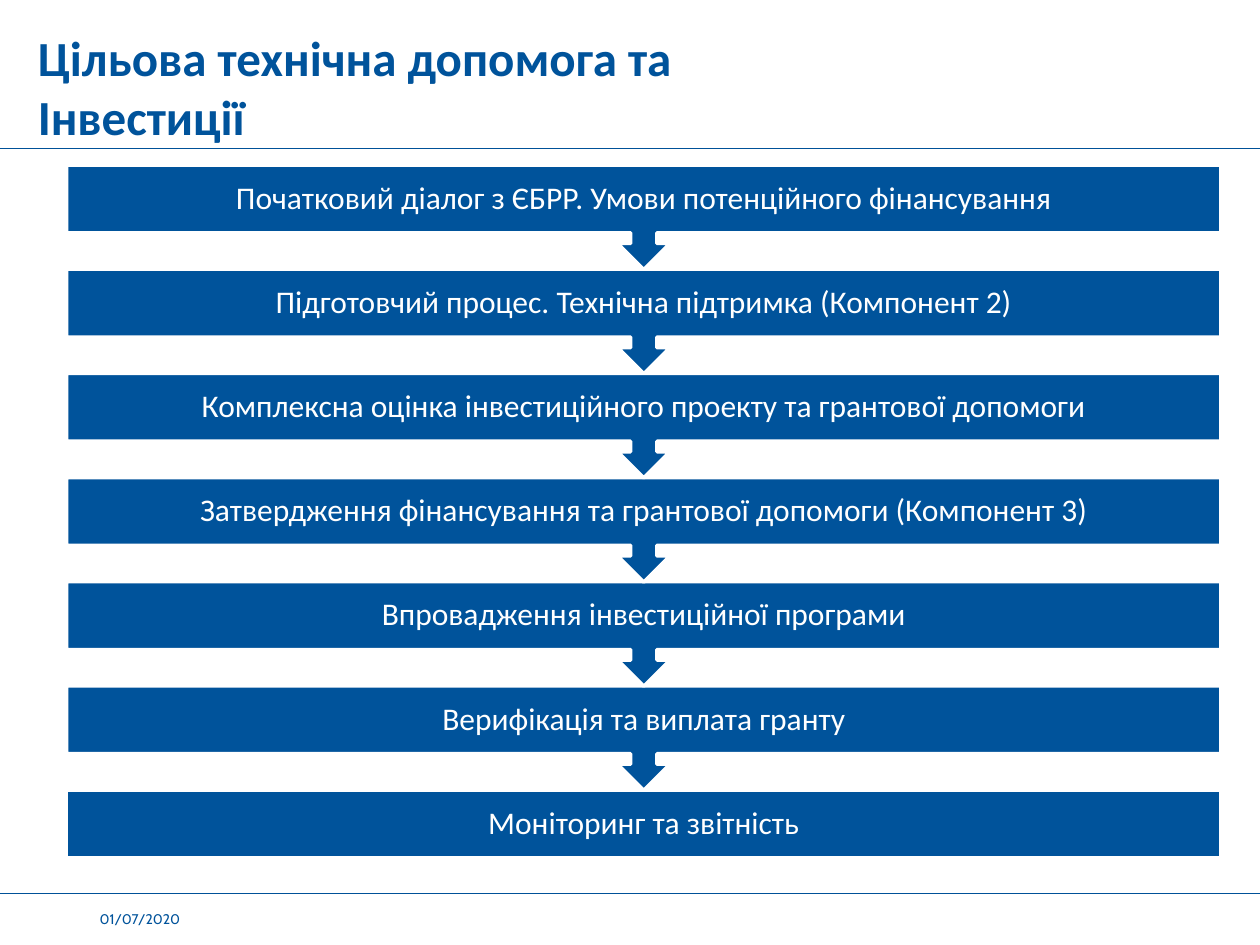
from lxml.etree import SubElement
from pptx import Presentation
from pptx.dml.color import RGBColor
from pptx.enum.shapes import MSO_CONNECTOR, MSO_SHAPE
from pptx.enum.text import MSO_ANCHOR, MSO_AUTO_SIZE, PP_ALIGN
from pptx.oxml.ns import qn
from pptx.util import Inches, Pt

# Content
TITLE = "Цільова технічна допомога та Інвестиції"
DATE = "01/07/2020"
STEPS = [
    "Початковий діалог з ЄБРР. Умови потенційного фінансування",
    "Підготовчий процес. Технічна підтримка (Компонент 2)",
    "Комплексна оцінка інвестиційного проекту та грантової допомоги",
    "Затвердження фінансування та грантової допомоги (Компонент 3)",
    "Впровадження інвестиційної програми",
    "Верифікація та виплата гранту",
    "Моніторинг та звітність",
]

# Style
COLORS = {"blue": "00539B", "rule": "005198", "white": "FFFFFF"}
TITLE_FONT = {"name": "Calibri", "size": Pt(28), "bold": True}
STEP_FONT = {"name": "Calibri", "size": Pt(18)}
DATE_FONT = {"name": "Cabin", "size": Pt(8)}

# Layout, in inches
SLIDE_W, SLIDE_H = 10, 7.5
RULES_Y = (1.18, 7.09)
LEFT, TOP, WIDTH = 0.53, 1.31, 9.16
BAR_H, PITCH = 0.54, 0.83
LAST_TOP = 6.27


def rgb(name):
    return RGBColor.from_string(COLORS[name])


def write(sp, text, font, color, align, inset=None):
    tf = sp.text_frame
    tf.word_wrap = True
    tf.auto_size = MSO_AUTO_SIZE.NONE
    tf.vertical_anchor = MSO_ANCHOR.MIDDLE
    if inset is not None:
        for side in ("left", "top", "right", "bottom"):
            setattr(tf, f"margin_{side}", Inches(inset))
    p = tf.paragraphs[0]
    p.alignment = align
    r = p.add_run()
    r.text = text
    for key, value in font.items():
        setattr(r.font, key, value)
    r.font.color.rgb = rgb(color)
    return p


prs = Presentation()
prs.slide_width, prs.slide_height = Inches(SLIDE_W), Inches(SLIDE_H)
s = prs.slides.add_slide(prs.slide_layouts[5])

# Header and footer rules
for y in RULES_Y:
    line = s.shapes.add_connector(
        MSO_CONNECTOR.STRAIGHT, 0, Inches(y), Inches(SLIDE_W), Inches(y))
    line.line.color.rgb = rgb("rule")
    line.line.width = Pt(0.25)
    SubElement(line._element.spPr, qn("a:effectLst"))

# Date
date = s.shapes.add_textbox(Inches(0.79), Inches(7.09), Inches(2.05), Inches(0.41))
write(date, DATE, DATE_FONT, "blue", PP_ALIGN.LEFT, 0)

# Title
title = s.shapes.title
title.left, title.top = Inches(0.2), Inches(0.2)
title.width, title.height = Inches(6.91), Inches(0.97)
write(title, TITLE, TITLE_FONT, "blue", PP_ALIGN.LEFT)

# Process steps, stacked from the bottom up so each arrow lies over the next bar
last = len(STEPS) - 1
step_gap = (LAST_TOP - TOP) / last
for i, text in reversed(list(enumerate(STEPS))):
    kind, height = ((MSO_SHAPE.RECTANGLE, BAR_H) if i == last
                    else (MSO_SHAPE.DOWN_ARROW_CALLOUT, PITCH))
    sp = s.shapes.add_shape(kind, Inches(LEFT), Inches(TOP + i * step_gap),
                            Inches(WIDTH), Inches(height))
    sp.shadow.inherit = False
    sp.fill.solid()
    sp.fill.fore_color.rgb = rgb("blue")
    sp.line.color.rgb = rgb("white")
    sp.line.width = Pt(2)
    p = write(sp, text, STEP_FONT, "white", PP_ALIGN.CENTER, 0.14)
    p.line_spacing = 0.9

prs.save("out.pptx")
